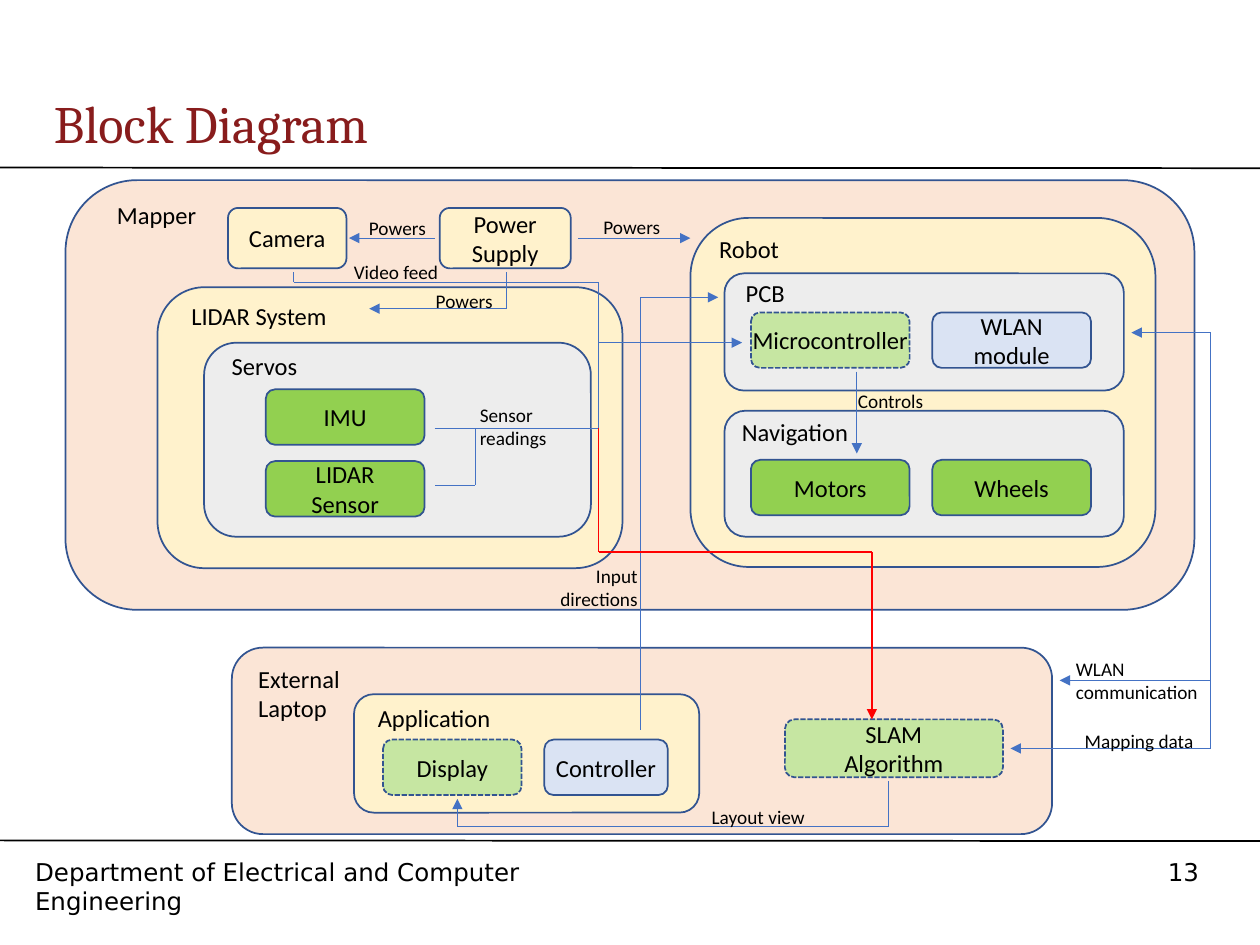
from dataclasses import dataclass

from lxml import etree
from pptx import Presentation
from pptx.dml.color import RGBColor
from pptx.enum.dml import MSO_LINE
from pptx.enum.shapes import MSO_CONNECTOR, MSO_SHAPE
from pptx.enum.text import MSO_ANCHOR, PP_ALIGN
from pptx.oxml.ns import qn
from pptx.util import Inches, Pt

ROUNDED = MSO_SHAPE.ROUNDED_RECTANGLE
STRAIGHT = MSO_CONNECTOR.STRAIGHT
DASH = MSO_LINE.SQUARE_DOT
TOP, MIDDLE = MSO_ANCHOR.TOP, MSO_ANCHOR.MIDDLE
LEFT, CENTER, RIGHT = PP_ALIGN.LEFT, PP_ALIGN.CENTER, PP_ALIGN.RIGHT

SLIDE_WIDTH, SLIDE_HEIGHT = Inches(10), Inches(7.5)
COLUMNS, ROWS = 100, 75
COLUMN, ROW = SLIDE_WIDTH // COLUMNS, SLIDE_HEIGHT // ROWS


@dataclass(frozen=True)
class Theme:
    ink: str = "000000"
    title: str = "881C1C"
    outline: str = "325491"
    link: str = "4472C4"
    alert: str = "FF0000"
    peach: str = "FBE5D6"
    cream: str = "FFF2CC"
    gray: str = "EDEDED"
    blue: str = "DAE3F3"
    green: str = "92D050"
    light_green: str = "C6E6A2"
    body_font: str = "Calibri"
    title_font: str = "Cambria"
    footer_font: str = "DejaVu Sans"
    title_size: float = 30
    body_size: float = 14
    note_size: float = 11
    outline_width: float = 1
    alert_width: float = 0.75
    link_width: float = 0.5


THEME = Theme()


@dataclass(frozen=True)
class Box:
    left: float
    top: float
    width: float
    height: float

    def inside(self, left, top, width, height):
        return Box(self.left + left, self.top + top, width, height)

    def lengths(self):
        return (round(self.left * COLUMN), round(self.top * ROW),
                round(self.width * COLUMN), round(self.height * ROW))


def write_text(text_frame, text, size=THEME.body_size, font=THEME.body_font,
               color=THEME.ink, align=LEFT, anchor=TOP, wrap=True):
    text_frame.word_wrap = wrap
    text_frame.vertical_anchor = anchor
    for index, line in enumerate(text.split("\n")):
        paragraph = text_frame.paragraphs[0] if index == 0 else text_frame.add_paragraph()
        paragraph.alignment = align
        run = paragraph.add_run()
        run.text = line
        run.font.size = Pt(size)
        run.font.name = font
        run.font.color.rgb = RGBColor.from_string(color)


def add_label(slide, box, text, **text_format):
    shape = slide.shapes.add_textbox(*box.lengths())
    write_text(shape.text_frame, text, **text_format)


def add_block(slide, box, fill, dashed=False):
    shape = slide.shapes.add_shape(ROUNDED, *box.lengths())
    shape.shadow.inherit = False
    shape.fill.solid()
    shape.fill.fore_color.rgb = RGBColor.from_string(fill)
    shape.line.color.rgb = RGBColor.from_string(THEME.outline)
    shape.line.width = Pt(THEME.outline_width)
    if dashed:
        shape.line.dash_style = DASH
    return shape


def add_frame(slide, box, fill, text, left, top):
    add_block(slide, box, fill)
    add_label(slide, box.inside(left, top, 13.3, 2.5), text)


def add_node(slide, box, fill, text, dashed=False):
    shape = add_block(slide, box, fill, dashed)
    text_frame = shape.text_frame
    side = round(box.width * COLUMN * 0.2)
    text_frame.margin_left = text_frame.margin_right = side
    text_frame.margin_top = text_frame.margin_bottom = 0
    write_text(text_frame, text, align=CENTER, anchor=MIDDLE, wrap=" " in text)


def add_route(slide, box, points, color=THEME.link, width=THEME.link_width, arrow=True):
    places = [(round((box.left + x) * COLUMN), round((box.top + y) * ROW)) for x, y in points]
    for start, end in zip(places, places[1:]):
        connector = slide.shapes.add_connector(STRAIGHT, *start, *end)
        connector.line.color.rgb = RGBColor.from_string(color)
        connector.line.width = Pt(width)
        if arrow and end == places[-1]:
            etree.SubElement(connector.line._get_or_add_ln(), qn("a:tailEnd"), type="triangle")
        etree.SubElement(connector._element.spPr, qn("a:effectLst"))


def draw_header(slide, box):
    add_label(slide, box.inside(3.3, 6.7, 96.7, 6), "Block Diagram",
              size=THEME.title_size, font=THEME.title_font, color=THEME.title)
    add_route(slide, box, [(0, box.height), (box.width, box.height + 0.05)],
              color=THEME.ink, width=THEME.outline_width, arrow=False)


def draw_footer(slide, box):
    add_route(slide, box, [(0, 0), (box.width, 0.05)],
              color=THEME.ink, width=THEME.outline_width, arrow=False)
    for left, width, text in [(1.8, 50, "Department of Electrical and Computer Engineering"),
                              (91.7, 6.7, "13")]:
        add_label(slide, box.inside(left, 0.8, width, 3.4), text, font=THEME.footer_font)


def draw_robot(slide, box):
    add_frame(slide, box, THEME.cream, "Robot", 1.3, 0.8)
    board = box.inside(2.7, 4.4, 31.7, 9.3)
    add_frame(slide, board, THEME.gray, "PCB", 0.7, -0.1)
    add_node(slide, board.inside(2.1, 3.1, 12.6, 4.4), THEME.light_green, "Microcontroller", dashed=True)
    add_node(slide, board.inside(16.5, 3.1, 12.6, 4.4), THEME.blue, "WLAN module")
    navigation = box.inside(2.7, 15.3, 31.7, 10)
    add_frame(slide, navigation, THEME.gray, "Navigation", 0.4, 0)
    for left, text in [(2.1, "Motors"), (16.5, "Wheels")]:
        add_node(slide, navigation.inside(left, 3.9, 12.6, 4.4), THEME.green, text)


def draw_lidar(slide, box):
    add_frame(slide, box, THEME.cream, "LIDAR System", 1.7, 0.6)
    servos = box.inside(3.7, 4.4, 30.7, 15.4)
    add_frame(slide, servos, THEME.gray, "Servos", 1.2, 0.2)
    for top, text in [(3.7, "IMU"), (9.4, "LIDAR Sensor")]:
        add_node(slide, servos.inside(4.9, top, 12.6, 4.4), THEME.green, text)


def draw_mapper(slide, box):
    add_frame(slide, box, THEME.peach, "Mapper", 3.1, 1.1)
    add_node(slide, box.inside(12.9, 2.2, 9.4, 4.8), THEME.cream, "Camera")
    add_node(slide, box.inside(29.7, 2.2, 10.4, 4.8), THEME.cream, "Power Supply")
    draw_robot(slide, box.inside(49.6, 3, 36.9, 27.7))
    draw_lidar(slide, box.inside(7.3, 8.5, 36.9, 22.3))


def draw_laptop(slide, box):
    add_frame(slide, box, THEME.peach, "External Laptop", 1.1, 0.8)
    add_node(slide, box.inside(43.9, 5.7, 17.3, 4.6), THEME.light_green, "SLAM Algorithm", dashed=True)
    application = box.inside(9.7, 3.7, 27.4, 9.4)
    add_frame(slide, application, THEME.cream, "Application", 0.9, 0.2)
    add_node(slide, application.inside(2.3, 3.6, 11, 4.4), THEME.light_green, "Display", dashed=True)
    add_node(slide, application.inside(15.1, 3.6, 9.8, 4.4), THEME.blue, "Controller")


def draw_links(slide, box):
    arrows = [
        [(45.9, 18.9), (54.8, 18.9)],
        [(34.5, 18.9), (27.7, 18.9)],
        [(40.2, 21.6), (40.2, 24.5), (29.3, 24.5)],
        [(23.3, 21.6), (23.3, 22.4), (47.5, 22.4), (47.5, 27.2), (58.9, 27.2)],
        [(50.8, 57.9), (50.8, 23.6), (57, 23.6)],
        [(68, 29.5), (68, 36)],
        [(96.1, 54), (96.1, 26.4), (89.8, 26.4)],
        [(96.1, 54), (84.1, 54)],
        [(96.1, 54), (96.1, 59.4), (80.2, 59.4)],
        [(70.5, 62), (70.5, 65.6), (36.3, 65.6), (36.3, 63.4)],
    ]
    for points in arrows:
        add_route(slide, box, points)
    for points in [[(34.5, 34), (47.5, 34), (47.5, 27.2)],
                   [(37.7, 34), (37.7, 38.5), (34.5, 38.5)]]:
        add_route(slide, box, points, arrow=False)
    add_route(slide, box, [(47.5, 34), (47.5, 43.8), (69.2, 43.8), (69.2, 57.1)],
              color=THEME.alert, width=THEME.alert_width)
    notes = [
        (46.9, 16.6, 12, "Powers", LEFT),
        (28.3, 16.7, 12, "Powers", LEFT),
        (33.6, 22.5, 12, "Powers", LEFT),
        (27.1, 20.2, 12, "Video feed", LEFT),
        (37.1, 31.5, 10, "Sensor readings", LEFT),
        (67.1, 30.4, 12, "Controls", LEFT),
        (41.6, 44.3, 10, "Input\ndirections", RIGHT),
        (84.4, 51.7, 12, "WLAN communication", LEFT),
        (85.1, 57.4, 12, "Mapping data", LEFT),
        (55.5, 63.4, 12, "Layout view", LEFT),
    ]
    for left, top, width, text, align in notes:
        add_label(slide, box.inside(left, top, width, 2.1), text, size=THEME.note_size, align=align)


def main():
    presentation = Presentation()
    presentation.slide_width, presentation.slide_height = SLIDE_WIDTH, SLIDE_HEIGHT
    slide = presentation.slides.add_slide(presentation.slide_layouts[6])
    draw_header(slide, Box(0, 0, COLUMNS, 13.3))
    draw_footer(slide, Box(0, 66.7, COLUMNS, 8.3))
    draw_mapper(slide, Box(5.2, 14.3, 89.6, 34.1))
    draw_laptop(slide, Box(18.4, 51.4, 65.1, 14.8))
    draw_links(slide, Box(0, 0, COLUMNS, ROWS))
    presentation.save("out.pptx")


if __name__ == "__main__":
    main()
